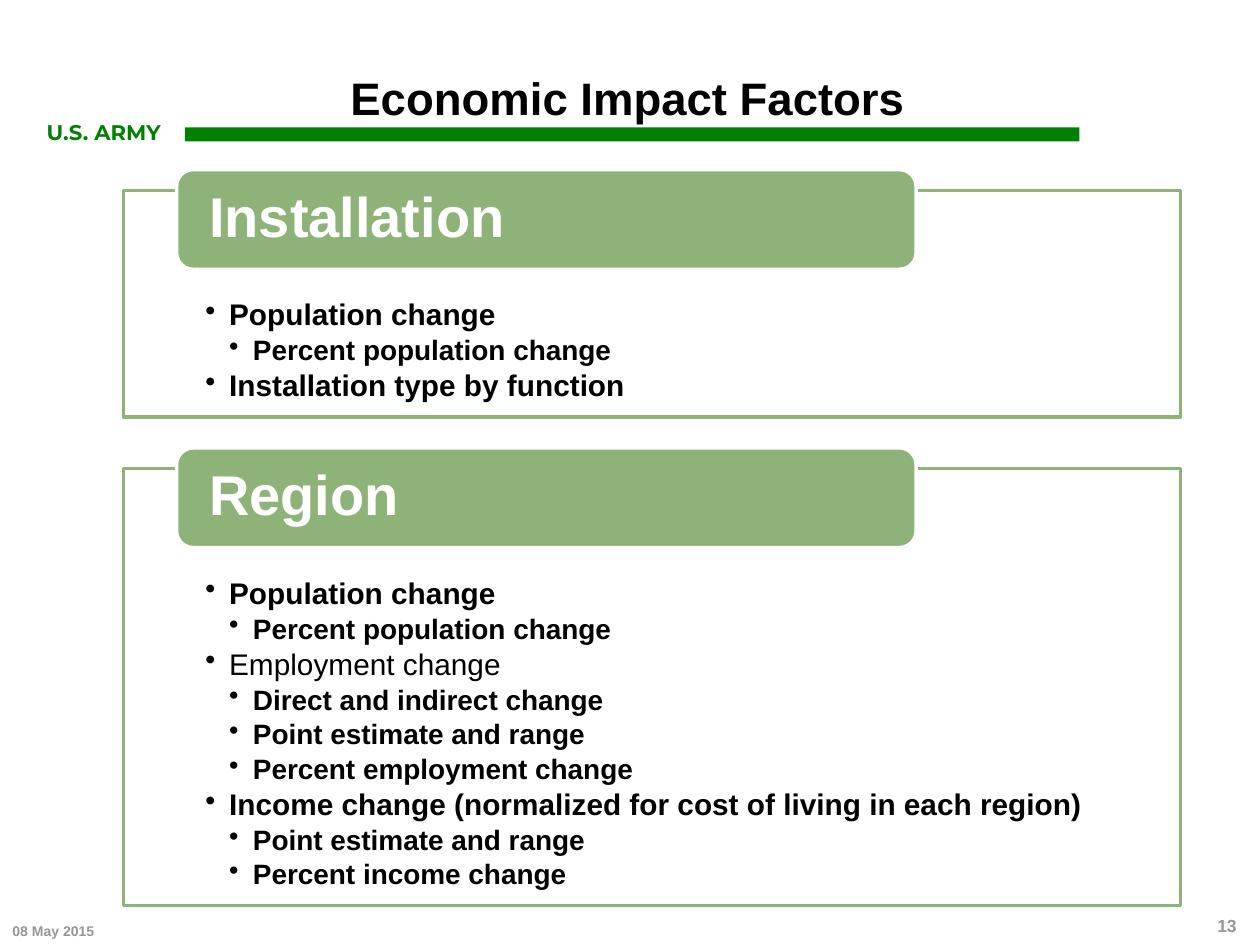
"""Build the Economic Impact Factors slide."""
from dataclasses import dataclass

import pptx
import pptx.dml.color
import pptx.enum.shapes
import pptx.enum.text
import pptx.oxml.ns
import pptx.util
from lxml import etree

Cm = pptx.util.Cm
Pt = pptx.util.Pt
RGBColor = pptx.dml.color.RGBColor
Shape = pptx.enum.shapes.MSO_SHAPE
Align = pptx.enum.text.PP_ALIGN
Anchor = pptx.enum.text.MSO_ANCHOR

BLACK = RGBColor(0x00, 0x00, 0x00)
WHITE = RGBColor(0xFF, 0xFF, 0xFF)
GREEN = RGBColor(0x00, 0x80, 0x00)
SAGE = RGBColor(0x8E, 0xB3, 0x79)
GRAY = RGBColor(0x96, 0x96, 0x96)

SIZES = {1: 17, 2: 16}
STEP = 0.48
RISE = 0.42


@dataclass
class Label:
    text: str
    box: tuple[float, float, float, float]
    size: float
    color: RGBColor
    font: str = "Arial"
    align: Align = Align.LEFT
    inset: tuple[float, float, float, float] = (0.25, 0.13, 0.25, 0.13)
    line: float = 1.0


@dataclass
class Item:
    text: str
    level: int = 1
    bold: bool = True


@dataclass
class Panel:
    head: str
    top: float
    height: float
    items: list[Item]


LABELS = [
    Label("U.S. ARMY", (0.69, 2.29, 3.05, 0.76), 12.1, GREEN, "Montserrat"),
    Label("Economic Impact Factors", (4.83, 0.64, 15.65, 1.88), 26, BLACK,
          align=Align.CENTER, inset=(0, 0, 0, 0), line=0.9),
    Label("08 May 2015", (0, 18.42, 5.08, 0.64), 8, GRAY),
    Label("13", (24.16, 18.36, 1.02, 0.64), 10, GRAY, align=Align.RIGHT),
]

PANELS = [
    Panel("Installation", 3.84, 4.57, [
        Item("Population change"),
        Item("Percent population change", 2),
        Item("Installation type by function"),
    ]),
    Panel("Region", 9.45, 8.81, [
        Item("Population change"),
        Item("Percent population change", 2),
        Item("Employment change", bold=False),
        Item("Direct and indirect change", 2),
        Item("Point estimate and range", 2),
        Item("Percent employment change", 2),
        Item("Income change (normalized for cost of living in each region)"),
        Item("Point estimate and range", 2),
        Item("Percent income change", 2),
    ]),
]


def set_frame(frame, inset: tuple, anchor: Anchor) -> None:
    """Set the wrapping, margins and anchor of a text frame."""
    frame.word_wrap = True
    frame.vertical_anchor = anchor
    (frame.margin_left, frame.margin_top,
     frame.margin_right, frame.margin_bottom) = map(Cm, inset)


def style(para, size: float, color: RGBColor, font: str = "Arial",
          bold: bool = True, align: Align = Align.LEFT,
          line: float = 0.9) -> None:
    """Format a paragraph and its runs."""
    para.alignment = align
    para.line_spacing = line
    for run in para.runs:
        run.font.name = font
        run.font.size = Pt(size)
        run.font.bold = bold
        run.font.color.rgb = color


def add_label(slide, label: Label) -> None:
    """Add a single line of text."""
    frame = slide.shapes.add_textbox(*map(Cm, label.box)).text_frame
    set_frame(frame, label.inset, Anchor.BOTTOM)
    frame.text = label.text
    style(frame.paragraphs[0], label.size, label.color, label.font,
          align=label.align, line=label.line)


def add_block(slide, kind: Shape, box: tuple, fill: RGBColor,
              edge: RGBColor | None = None):
    """Add a filled shape, outlined when an edge colour is given."""
    shape = slide.shapes.add_shape(kind, *map(Cm, box))
    shape.shadow.inherit = False
    shape.fill.solid()
    shape.fill.fore_color.rgb = fill
    if edge is None:
        shape.line.fill.background()
    else:
        shape.line.color.rgb = edge
        shape.line.width = Pt(2)
    return shape


def add_item(para, item: Item) -> None:
    """Write one bulleted item."""
    para.text = item.text
    props = para._p.get_or_add_pPr()
    props.set("marL", str(Cm(STEP * item.level)))
    props.set("indent", str(-Cm(STEP)))
    mark = etree.SubElement(props, pptx.oxml.ns.qn("a:buChar"))
    mark.set("char", "•")
    para.level = item.level
    para.space_after = Pt(2.5)
    style(para, SIZES[item.level], BLACK, bold=item.bold)


def add_panel(slide, panel: Panel) -> None:
    """Add a bulleted frame with its heading tab."""
    box = (2.49, panel.top, 21.31, panel.height)
    body = add_block(slide, Shape.RECTANGLE, box, WHITE, SAGE).text_frame
    set_frame(body, (1.65, 2.21, 1.65, 0.33), Anchor.TOP)
    for index, item in enumerate(panel.items):
        para = body.add_paragraph() if index else body.paragraphs[0]
        add_item(para, item)
    box = (3.56, panel.top - RISE, 14.91, 2.01)
    head = add_block(slide, Shape.ROUNDED_RECTANGLE, box, SAGE, WHITE).text_frame
    set_frame(head, (0.56, 0, 0.56, 0), Anchor.MIDDLE)
    head.text = panel.head
    style(head.paragraphs[0], 32, WHITE)


def main() -> None:
    """Build and save the slide."""
    deck = pptx.Presentation()
    deck.slide_width, deck.slide_height = Cm(25.4), Cm(19.05)
    slide = deck.slides.add_slide(deck.slide_layouts[6])
    add_block(slide, Shape.RECTANGLE, (3.73, 2.57, 18.03, 0.28), GREEN)
    for label in LABELS:
        add_label(slide, label)
    for panel in PANELS:
        add_panel(slide, panel)
    deck.save("out.pptx")


if __name__ == "__main__":
    main()
